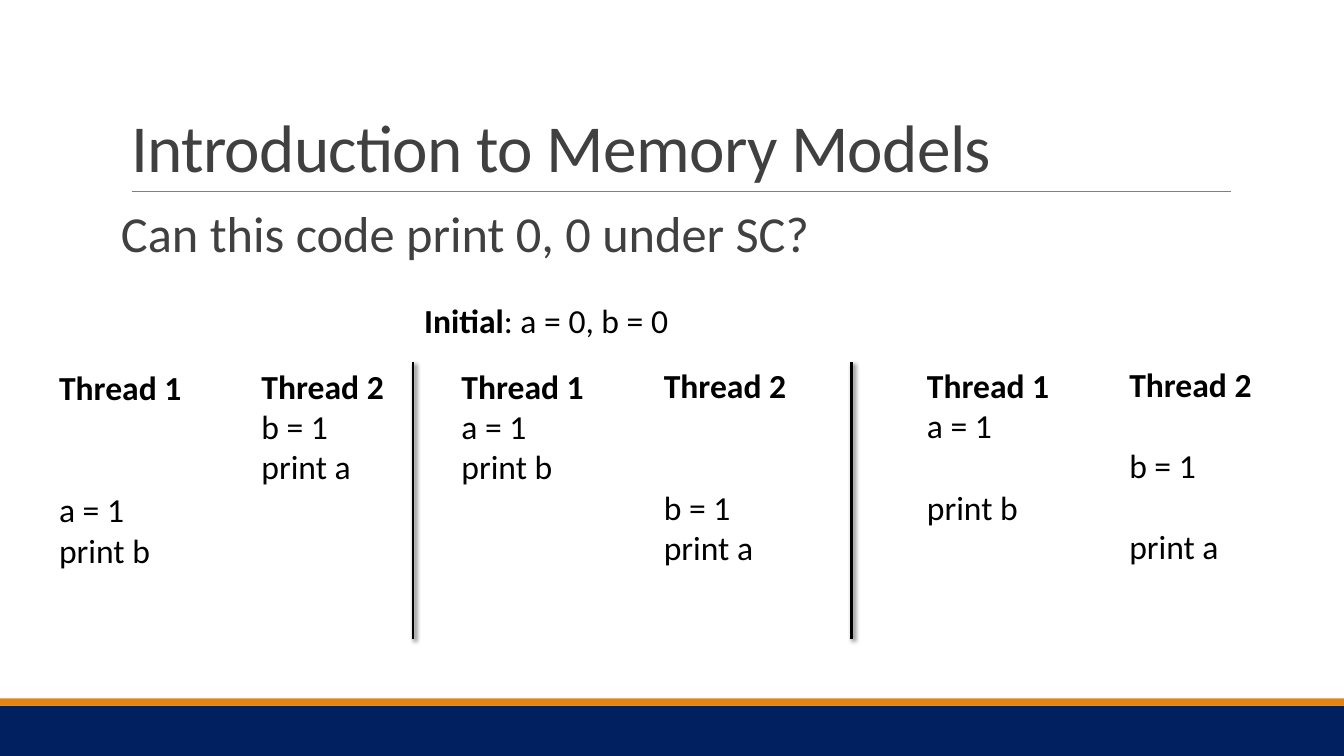
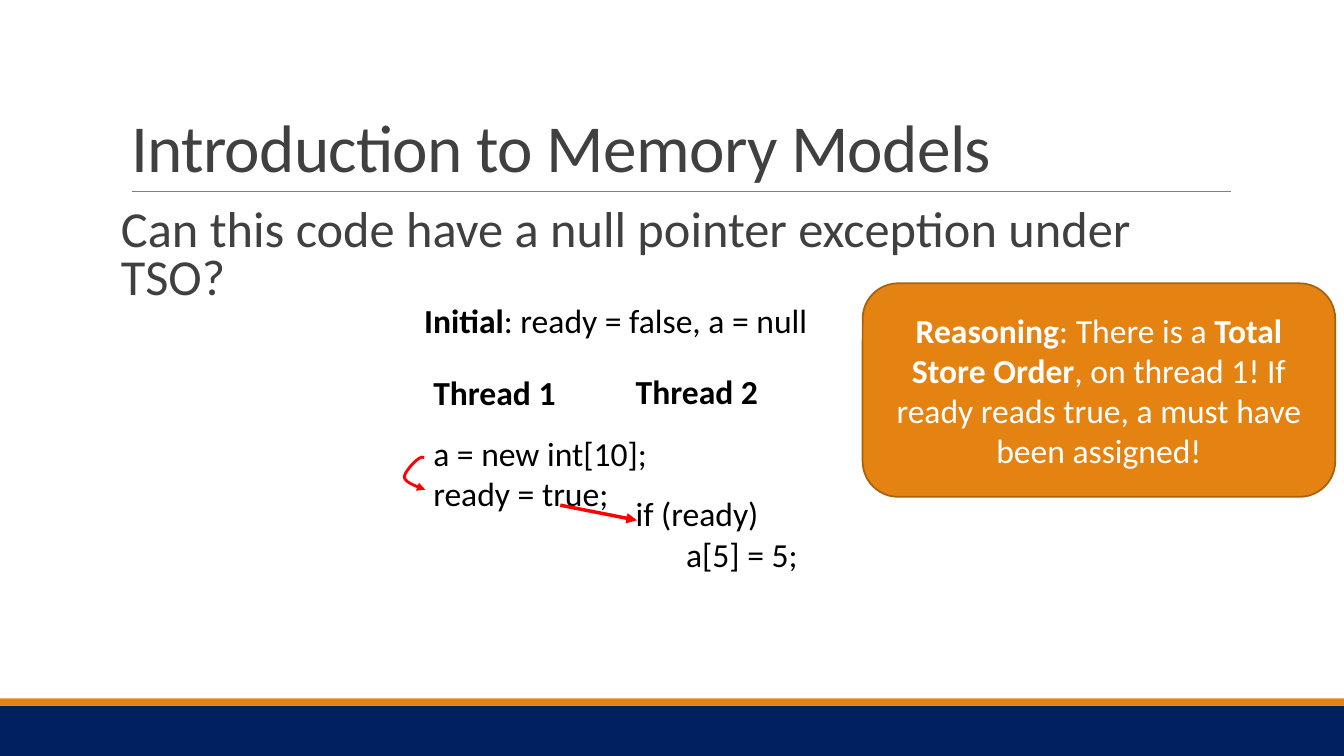
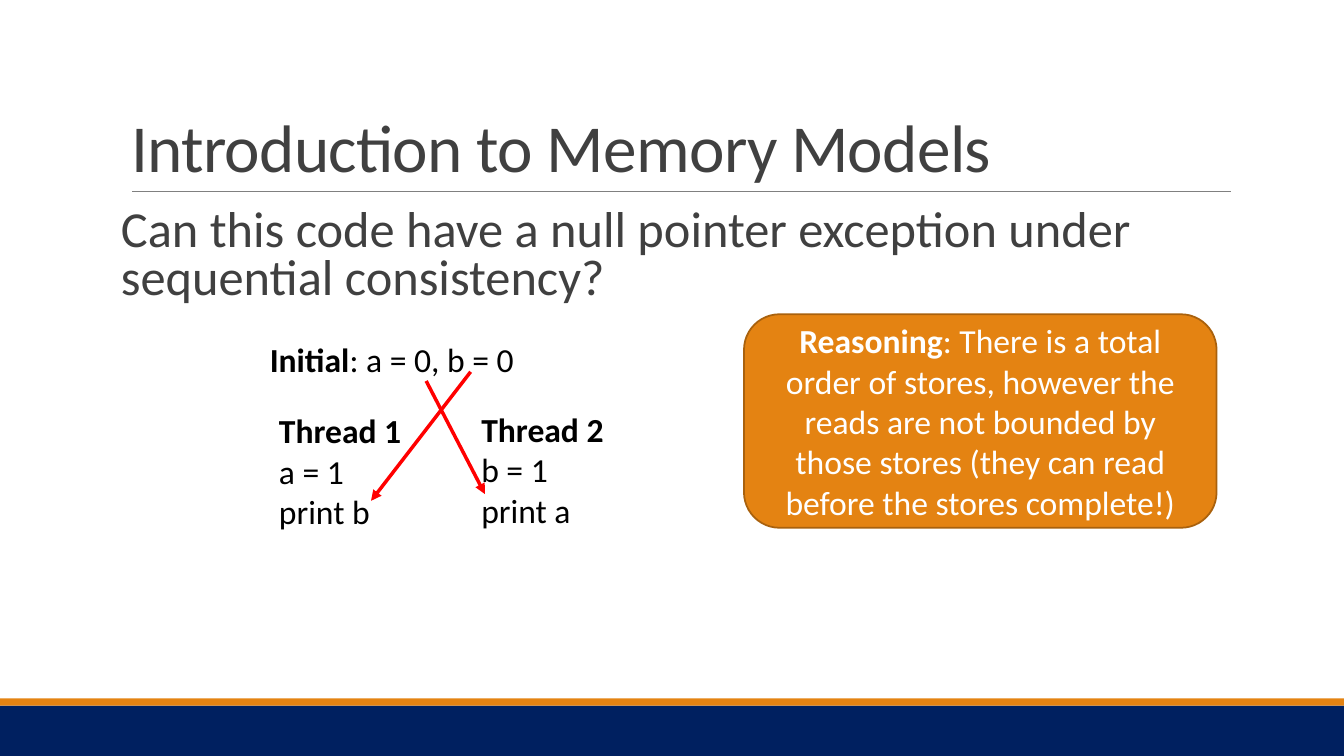
from dataclasses import dataclass

from lxml.etree import SubElement
from pptx import Presentation
from pptx.dml.color import RGBColor
from pptx.enum.shapes import MSO_CONNECTOR, MSO_SHAPE
from pptx.enum.text import MSO_ANCHOR, MSO_AUTO_SIZE, PP_ALIGN
from pptx.oxml.ns import qn
from pptx.util import Cm, Pt

NAVY, ORANGE, BROWN = "002060", "E48312", "A9610D"
GREY, RULE_GREY = "404040", "808080"
BLACK, WHITE, RED = "000000", "FFFFFF", "FF0000"
CODE_LINE = 29.3


def color(hex_code):
    """Return the colour for a hex string."""
    return RGBColor.from_string(hex_code)


@dataclass
class Step:
    """One line of thread code, with the lines skipped above it and its indent."""

    code: str
    skipped: float = 0
    indent: float = 0


def bezier(start, first, second, end, pieces=8):
    """Return the points after the start along a cubic curve."""
    points = []
    for i in range(1, pieces + 1):
        t = i / pieces
        weights = ((1 - t) ** 3, 3 * t * (1 - t) ** 2, 3 * t * t * (1 - t), t ** 3)
        points.append(tuple(
            sum(w * p[axis] for w, p in zip(weights, (start, first, second, end)))
            for axis in (0, 1)))
    return points


class Lecture:
    """Holds the deck style and the slide being filled."""

    font = "Calibri"
    title = "Introduction to Memory Models"

    def __init__(self):
        self.deck = Presentation()
        self.deck.slide_width, self.deck.slide_height = Cm(33.87), Cm(19.05)
        self.slide = None

    def new_slide(self, question, spacing):
        """Start a slide with its bands, title, rule and question."""
        self.slide = self.deck.slides.add_slide(self.deck.slide_layouts[5])
        self.block(MSO_SHAPE.RECTANGLE, 0, 17.78, 33.87, 1.27, NAVY)
        self.block(MSO_SHAPE.RECTANGLE, 0, 17.6, 33.87, 0.18, ORANGE)
        self.line((3.33, 4.83), (31.01, 4.83), RULE_GREY, 0.5)

        heading = self.slide.shapes.title
        heading.left, heading.top = Cm(3.05), Cm(0.79)
        heading.width, heading.height = Cm(27.94), Cm(4.04)
        frame = heading.text_frame
        frame.word_wrap = True
        frame.auto_size = MSO_AUTO_SIZE.NONE
        frame.vertical_anchor = MSO_ANCHOR.BOTTOM
        paragraph = frame.paragraphs[0]
        self.set_text(paragraph, [(self.title, False)], 48, GREY)
        paragraph.line_spacing = 0.85
        paragraph.runs[0]._r.get_or_add_rPr().set("spc", "-50")

        frame = self.text_box(3.05, 5.13, 27.94, 2.79)
        frame.margin_left = frame.margin_right = 0
        paragraph = frame.paragraphs[0]
        self.set_text(paragraph, [(question, False)], 36, GREY)
        paragraph.line_spacing = spacing

    def set_text(self, paragraph, runs, size=24, ink=BLACK, align=PP_ALIGN.LEFT):
        """Fill a paragraph with (text, bold) runs."""
        paragraph.alignment = align
        for text, bold in runs:
            run = paragraph.add_run()
            run.text = text
            if len(runs) > 1:
                run.font.bold = bold
        font = paragraph.font
        font.name, font.size = self.font, Pt(size)
        font.color.rgb = color(ink)
        if len(runs) == 1:
            font.bold = runs[0][1]

    def text_box(self, left, top, width, height):
        """Add a wrapping text box and return its frame."""
        box = self.slide.shapes.add_textbox(Cm(left), Cm(top), Cm(width), Cm(height))
        box.text_frame.word_wrap = True
        return box.text_frame

    def block(self, kind, left, top, width, height, fill):
        """Add a filled shape without outline or shadow."""
        shape = self.slide.shapes.add_shape(kind, Cm(left), Cm(top), Cm(width), Cm(height))
        shape.shadow.inherit = False
        shape.fill.solid()
        shape.fill.fore_color.rgb = color(fill)
        shape.line.fill.background()
        return shape

    def stroke(self, line, ink, width, arrow=None):
        """Format a line, with an arrowhead at headEnd or tailEnd if asked."""
        line.color.rgb = color(ink)
        line.width = Pt(width)
        if arrow:
            SubElement(line._get_or_add_ln(), qn(f"a:{arrow}"), type="triangle")

    def line(self, start, end, ink, width, arrow=None):
        """Add a straight line and return its empty effect list."""
        connector = self.slide.shapes.add_connector(
            MSO_CONNECTOR.STRAIGHT, *(Cm(v) for v in (*start, *end)))
        self.stroke(connector.line, ink, width, arrow)
        return SubElement(connector._element.spPr, qn("a:effectLst"))

    def arrow(self, start, end):
        """Add a red arrow between two points."""
        self.line(start, end, RED, 2.5, "tailEnd")

    def divider(self, left):
        """Add a vertical divider with a soft shadow."""
        effects = self.line((left, 9.12), (left, 16.1), BLACK, 2)
        shadow = SubElement(effects, qn("a:outerShdw"), blurRad=str(Pt(3)),
                            dist=str(Pt(2)), dir="2700000", rotWithShape="0")
        ink = SubElement(shadow, qn("a:srgbClr"), val=BLACK)
        SubElement(ink, qn("a:alpha"), val="60000")

    def curved_arrow(self, start, *curves):
        """Add a red curve whose arrowhead sits at its start."""
        points = [start]
        for curve in curves:
            points += bezier(points[-1], *curve)
        corners = [(Cm(x), Cm(y)) for x, y in points]
        builder = self.slide.shapes.build_freeform(*corners[0])
        builder.add_line_segments(corners[1:], close=False)
        shape = builder.convert_to_shape()
        shape.shadow.inherit = False
        shape.fill.background()
        self.stroke(shape.line, RED, 2, "headEnd")

    def initial(self, left, top, values):
        """State the initial values of the variables."""
        frame = self.text_box(left, top, 12.19, 1.27)
        self.set_text(frame.paragraphs[0], [("Initial", True), (f": {values}", False)])

    def threads(self, left, top, *programs):
        """Set the programs of the threads side by side."""
        for i, steps in enumerate(programs):
            frame = self.text_box(left + 5.1 * i, top - 0.03 * i, 6 - 0.9 * i, 5.38)
            self.set_text(frame.paragraphs[0], [(f"Thread {i + 1}", True)])
            for step in steps:
                paragraph = frame.add_paragraph()
                if step.indent:
                    paragraph._p.get_or_add_pPr().set("marL", str(Cm(step.indent)))
                if step.skipped:
                    paragraph.space_before = Pt(round(step.skipped * CODE_LINE, 1))
                self.set_text(paragraph, [(step.code, False)])

    def reasoning(self, left, top, *runs):
        """Add the orange callout that explains the answer."""
        callout = self.block(MSO_SHAPE.ROUNDED_RECTANGLE, left, top, 11.91, 5.38, ORANGE)
        self.stroke(callout.line, BROWN, 1.25)
        frame = callout.text_frame
        frame.word_wrap = True
        frame.vertical_anchor = MSO_ANCHOR.MIDDLE
        self.set_text(frame.paragraphs[0], [("Reasoning", True), *runs],
                      ink=WHITE, align=PP_ALIGN.CENTER)


def main():
    """Build the three slides and save them."""
    lecture = Lecture()

    lecture.new_slide("Can this code print 0, 0 under SC?", 0.9)
    lecture.initial(10.44, 7.44, "a = 0, b = 0")
    lecture.threads(1.24, 9.12,
                    [Step("a = 1", 2), Step("print b")],
                    [Step("b = 1"), Step("print a")])
    lecture.threads(11.38, 9.09,
                    [Step("a = 1"), Step("print b")],
                    [Step("b = 1", 2), Step("print a")])
    lecture.threads(23.11, 9.07,
                    [Step("a = 1"), Step("print b", 1)],
                    [Step("b = 1", 1), Step("print a", 1)])
    for left in (10.41, 21.46):
        lecture.divider(left)

    lecture.new_slide("Can this code have a null pointer exception under TSO?", 0.8)
    lecture.initial(10.44, 7.44, "ready = false, a = null")
    lecture.threads(10.67, 9.25,
                    [Step("a = new int[10];", 0.5), Step("ready = true;")],
                    [Step("if (ready)", 2), Step("a[5] = 5;", indent=1.27)])
    lecture.reasoning(21.74, 7.14, (": There is a ", False), ("Total Store Order", True),
                      (", on thread 1! If ready reads true, a must have been assigned!",
                       False))
    lecture.curved_arrow((10.72, 12.34),
                         ((10.44, 12.24), (10.19, 12.14), (10.19, 12.01)),
                         ((10.19, 11.89), (10.59, 11.43), (10.69, 11.53)))
    lecture.arrow((14.12, 12.73), (16.05, 13.11))

    lecture.new_slide("Can this code have a null pointer exception under "
                      "sequential consistency?", 0.8)
    lecture.initial(6.55, 8.41, "a = 0, b = 0")
    lecture.threads(6.78, 10.21,
                    [Step("a = 1"), Step("print b")],
                    [Step("b = 1"), Step("print a")])
    lecture.arrow((10.74, 9.6), (12.22, 12.45))
    lecture.arrow((11.86, 9.37), (9.35, 12.62))
    lecture.reasoning(18.75, 7.92,
                      (": There is a total order of stores, however the reads are not "
                       "bounded by those stores (they can read before the stores "
                       "complete!)", False))

    lecture.deck.save("out.pptx")


if __name__ == "__main__":
    main()
